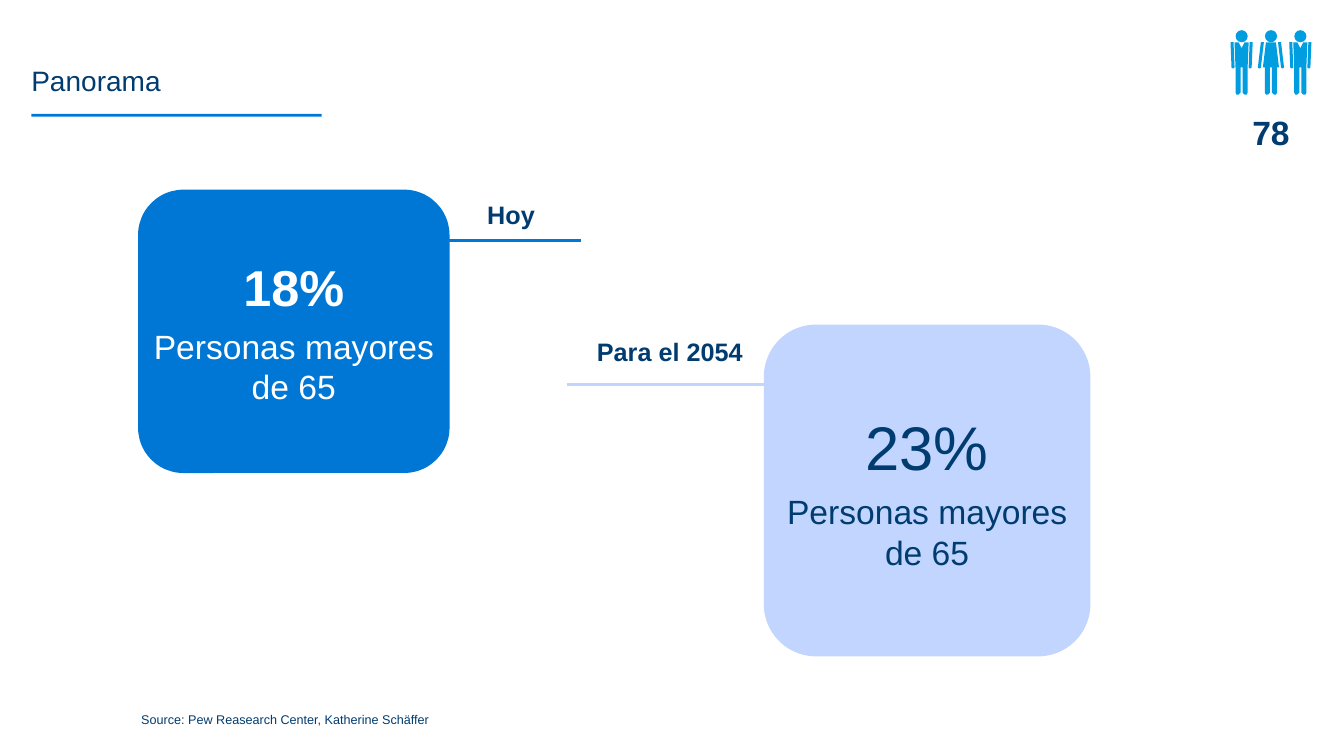
"""Build the slide on the share of people over 65."""
import pptx
import pptx.dml.color
import pptx.enum.shapes
import pptx.enum.text
import pptx.oxml
import pptx.oxml.ns
import pptx.util

Cm = pptx.util.Cm
Pt = pptx.util.Pt
SHAPE = pptx.enum.shapes.MSO_SHAPE
ALIGN = pptx.enum.text.PP_ALIGN
ANCHOR = pptx.enum.text.MSO_ANCHOR

COLOURS = {"navy": "003C70", "blue": "0077D4", "pale": "C1D5FF",
           "cyan": "009EE0", "white": "FFFFFF"}
FONT = "Arial"

ICON_UNIT = Cm(2.54) / 100
HEAD_SIZE = 12
LEG = [(-6, 62), (-5, 64), (-3, 64), (-1, 62), (-1, 37)]
FIGURES = {
    "man": {"body": [(0, 18), (-3, 12), (-7, 12), (-6, 37)] + LEG,
            "arm": [(-11, 12), (-10, 37), (-9, 38), (-8, 38), (-7, 37), (-8.5, 12)]},
    "woman": {"body": [(-5, 12), (-8, 37), (-5.5, 37)] + LEG,
              "arm": [(-9.5, 12), (-13, 37), (-12, 38), (-11, 38), (-10, 37), (-7, 12)]},
}


def colour(name):
    """Return the named colour of the palette."""
    return pptx.dml.color.RGBColor.from_string(COLOURS[name])


def paint(shape, fill):
    """Give a shape a plain fill without line or shadow."""
    shape.shadow.inherit = False
    shape.fill.solid()
    shape.fill.fore_color.rgb = colour(fill)
    shape.line.fill.background()


def write(shape, lines, ink, align, anchor):
    """Fill a shape with (text, size, bold) lines."""
    frame = shape.text_frame
    frame.word_wrap = True
    frame.vertical_anchor = anchor
    frame.margin_left = frame.margin_right = frame.margin_top = frame.margin_bottom = 0
    frame.text = "\n".join(text for text, size, bold in lines)
    for para, (text, size, bold) in zip(frame.paragraphs, lines):
        para.alignment = align
        para.space_after = Pt(6 if len(lines) > 1 else 0)
        for span in para.runs:
            span.font.name = FONT
            span.font.size = Pt(size)
            span.font.bold = bold
            span.font.color.rgb = colour(ink)


def add_text(shapes, box, text, size, bold=False, align=ALIGN.LEFT, anchor=ANCHOR.TOP):
    """Place one line of navy text in a box given in centimetres."""
    label = shapes.add_textbox(*map(Cm, box))
    write(label, [(text, size, bold)], "navy", align, anchor)


def add_header(page, box):
    """Place the title with the accent bar below it."""
    left, top, width, height = box
    add_text(page.shapes, box, "Panorama", 20, anchor=ANCHOR.BOTTOM)
    bar = page.shapes.add_shape(SHAPE.RECTANGLE, Cm(left), Cm(top + height + 0.41),
                                Cm(7.32), Cm(0.07))
    paint(bar, "blue")


def add_card(page, box, fill, ink, figure, rule, label):
    """Place a share card with its rule and period label, both offset from the card."""
    left, top, width, height = box
    start, end, drop = rule
    period, (label_left, label_top, label_width, label_height) = label
    line = page.shapes.add_connector(
        pptx.enum.shapes.MSO_CONNECTOR.STRAIGHT,
        Cm(left + start), Cm(top + drop), Cm(left + end), Cm(top + drop))
    line.line.color.rgb = colour(fill)
    line.line.width = Pt(2)
    line._element.spPr.append(pptx.oxml.parse_xml(
        "<a:effectLst %s/>" % pptx.oxml.ns.nsdecls("a")))
    card = page.shapes.add_shape(SHAPE.ROUNDED_RECTANGLE, *map(Cm, box))
    card.adjustments[0] = 0.16
    paint(card, fill)
    write(card, [figure, ("Personas mayores de 65", 24, False)], ink,
          ALIGN.CENTER, ANCHOR.MIDDLE)
    add_text(page.shapes, (left + label_left, top + label_top, label_width, label_height),
             period, 18, True, ALIGN.CENTER)


def add_outline(shapes, points, centre, top):
    """Draw one closed outline around a centre line."""
    builder = shapes.build_freeform(*points[0], scale=ICON_UNIT)
    builder.add_line_segments(points[1:], close=True)
    paint(builder.convert_to_shape(centre, top), "cyan")


def mirror(points):
    """Return the points reflected across the centre line, in reverse order."""
    return [(-x, y) for x, y in reversed(points)]


def add_person(shapes, kind, centre, top):
    """Draw one standing figure with head, body and arms."""
    figure = FIGURES[kind]
    head_size = int(HEAD_SIZE * ICON_UNIT)
    head = shapes.add_shape(SHAPE.OVAL, centre - head_size // 2, top, head_size, head_size)
    paint(head, "cyan")
    body, arm = figure["body"], figure["arm"]
    for points in (body + mirror(body), arm, mirror(arm)):
        add_outline(shapes, points, centre, top)


def add_people_counter(page, box):
    """Place three figures above the count."""
    left, top, width, height = box
    shapes = page.shapes.add_group_shape().shapes
    for index, kind in enumerate(("man", "woman", "man")):
        add_person(shapes, kind, Cm(left + width / 2 + (index - 1) * 0.74), Cm(top))
    add_text(shapes, (left, top + height - 1.17, width, 1.17), "78", 24, True,
             ALIGN.CENTER, ANCHOR.MIDDLE)


def add_overview(deck):
    """Add the overview slide with both cards."""
    page = deck.slides.add_slide(deck.slide_layouts[6])
    add_header(page, (0.79, 0.76, 29, 1.7))
    add_card(page, (3.48, 4.78, 7.85, 7.14), "blue", "white", ("18%", 36, True),
             (7.67, 11.15, 1.27), ("Hoy", (7.98, 0.25, 2.84, 0.91)))
    add_card(page, (19.25, 8.18, 8.23, 8.36), "pale", "navy", ("23%", 44, False),
             (-4.95, 0.18, 1.5), ("Para el 2054", (-4.34, 0.3, 3.94, 1.19)))
    add_text(page.shapes, (3.56, 17.91, 18.49, 0.41),
             "Source: Pew Reasearch Center, Katherine Schäffer", 9, anchor=ANCHOR.BOTTOM)
    add_people_counter(page, (31, 0.76, 2.06, 3.15))


def main():
    """Create the deck and save it."""
    deck = pptx.Presentation()
    deck.slide_width, deck.slide_height = Cm(33.87), Cm(19.05)
    add_overview(deck)
    deck.save("out.pptx")


if __name__ == "__main__":
    main()
